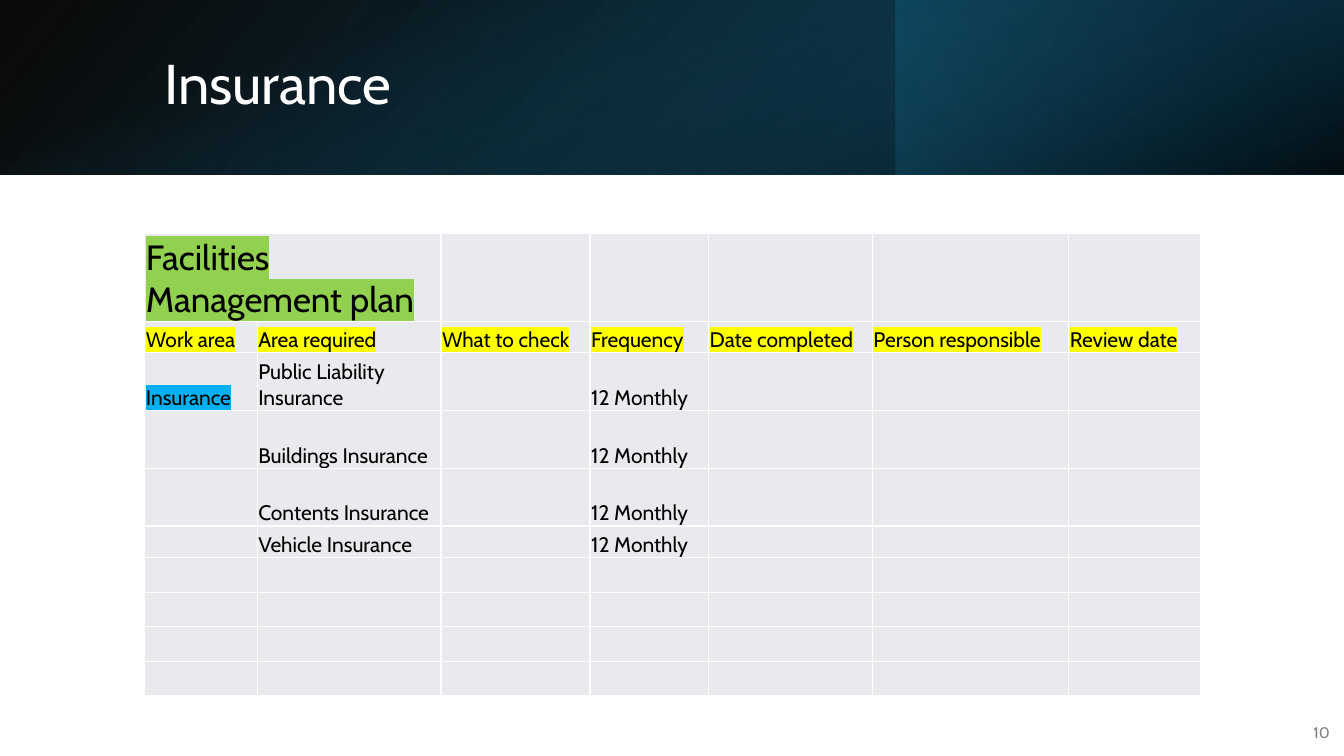
from lxml import etree
from pptx import Presentation
from pptx.dml.color import RGBColor
from pptx.enum.shapes import MSO_SHAPE
from pptx.enum.text import MSO_ANCHOR, PP_ALIGN
from pptx.oxml.ns import qn
from pptx.util import Pt

PX = 9525
FONT = "Cabin"
RECTANGLE = MSO_SHAPE.RECTANGLE
MIDDLE, BOTTOM = MSO_ANCHOR.MIDDLE, MSO_ANCHOR.BOTTOM
LEFT, RIGHT = PP_ALIGN.LEFT, PP_ALIGN.RIGHT
TITLE_ONLY = 5

COLORS = {
    "white": "FFFFFF",
    "black": "000000",
    "navy": "104862",
    "deep": "0B3041",
    "teal": "156082",
    "grey": "808080",
    "cell": "E8EAED",
    "green": "92D050",
    "yellow": "FFFF00",
    "blue": "00B0F0",
}

COLUMN_WIDTHS = [107, 175, 142, 113, 156, 187, 126]
ROW_HEIGHTS = [84, 30, 55, 55, 55, 30, 33, 33, 33, 33]
HEADINGS = ["Work area", "Area required", "What to check", "Frequency",
            "Date completed", "Person responsible", "Review date"]
POLICIES = ["Public Liability Insurance", "Buildings Insurance",
            "Contents Insurance", "Vehicle Insurance"]


def px(*lengths):
    return [length * PX for length in lengths]


def add_color(parent, color, opacity=100):
    element = etree.SubElement(parent, qn("a:srgbClr"), val=COLORS[color])
    if opacity < 100:
        etree.SubElement(element, qn("a:alpha"), val=str(opacity * 1000))


def add_run(paragraph, text, size, color, highlight=None):
    run = paragraph.add_run()
    run.text = text
    run.font.size = Pt(size)
    run.font.name = FONT
    run.font.color.rgb = RGBColor.from_string(COLORS[color])
    if highlight:
        mark = etree.Element(qn("a:highlight"))
        add_color(mark, highlight)
        run.font.fill
        run._r.rPr.find(qn("a:solidFill")).addnext(mark)


def add_gradient_band(slide, box, stops, angle, rotation=0, flipped=False):
    shape = slide.shapes.add_shape(RECTANGLE, *px(*box))
    shape.shadow.inherit = False
    shape.line.fill.background()
    shape.rotation = rotation
    properties = shape.element.spPr
    if flipped:
        properties.find(qn("a:xfrm")).set("flipH", "1")
    gradient = etree.Element(qn("a:gradFill"), rotWithShape="1")
    stop_list = etree.SubElement(gradient, qn("a:gsLst"))
    for position, color, opacity in stops:
        stop = etree.SubElement(stop_list, qn("a:gs"), pos=str(position * 1000))
        add_color(stop, color, opacity)
    etree.SubElement(gradient, qn("a:lin"), ang=str(angle * 60000), scaled="0")
    properties.find(qn("a:prstGeom")).addnext(gradient)


def set_title(slide, box, text):
    title = slide.shapes.title
    title.left, title.top, title.width, title.height = px(*box)
    title.text_frame.vertical_anchor = MIDDLE
    paragraph = title.text_frame.paragraphs[0]
    paragraph.alignment = LEFT
    paragraph.line_spacing = 0.9
    add_run(paragraph, text, 40, "white")
    slide.shapes.element.append(title.element)


def add_page_number(slide, box, text):
    frame = slide.shapes.add_textbox(*px(*box)).text_frame
    frame.word_wrap = True
    frame.vertical_anchor = MIDDLE
    paragraph = frame.paragraphs[0]
    paragraph.alignment = RIGHT
    paragraph.space_after = Pt(6)
    add_run(paragraph, text, 11, "grey")


def format_cell(cell):
    cell.fill.solid()
    cell.fill.fore_color.rgb = RGBColor.from_string(COLORS["cell"])
    cell.vertical_anchor = BOTTOM
    cell.margin_left = cell.margin_top = cell.margin_right = PX
    cell.margin_bottom = 0
    properties = cell._tc.tcPr
    for index, side in enumerate(("lnL", "lnR", "lnT", "lnB")):
        border = etree.Element(qn(f"a:{side}"), w=str(Pt(1)))
        add_color(etree.SubElement(border, qn("a:solidFill")), "white")
        properties.insert(index, border)


def write_cell(cell, text, size=15, highlight=None):
    paragraph = cell.text_frame.paragraphs[0]
    if text:
        add_run(paragraph, text, size, "black", highlight)
    else:
        etree.SubElement(paragraph._p, qn("a:endParaRPr"), sz="1000")


def add_plan_table(slide, left, top):
    size = (sum(COLUMN_WIDTHS), sum(ROW_HEIGHTS))
    table = slide.shapes.add_table(len(ROW_HEIGHTS), len(COLUMN_WIDTHS),
                                   *px(left, top, *size)).table
    table.first_row = table.horz_banding = False
    for column, width in zip(table.columns, COLUMN_WIDTHS):
        column.width = width * PX
    for row, height in zip(table.rows, ROW_HEIGHTS):
        row.height = height * PX
    contents = {(0, 0): ("Facilities Management plan", 25, "green"),
                (2, 0): ("Insurance", 15, "blue")}
    for column, heading in enumerate(HEADINGS):
        contents[1, column] = (heading, 15, "yellow")
    for row, policy in enumerate(POLICIES, 2):
        contents[row, 1] = (policy,)
        contents[row, 3] = ("12 Monthly",)
    for row in range(len(ROW_HEIGHTS)):
        for column in range(len(COLUMN_WIDTHS)):
            cell = table.cell(row, column)
            format_cell(cell)
            write_cell(cell, *contents.get((row, column), ("",)))
    table.cell(0, 0).merge(table.cell(0, 1))


def main():
    presentation = Presentation()
    presentation.slide_width, presentation.slide_height = px(1280, 720)
    slide = presentation.slides.add_slide(presentation.slide_layouts[TITLE_ONLY])
    add_gradient_band(slide, (0, 0, 1280, 166),
                      [(0, "black", 96), (100, "navy", 100)], 140, flipped=True)
    add_gradient_band(slide, (853, 0, 427, 166),
                      [(19, "deep", 68), (100, "teal", 79)], 320, rotation=180)
    add_gradient_band(slide, (557, -557, 166, 1280),
                      [(23, "teal", 0), (99, "black", 74)], 340, rotation=90)
    set_title(slide, (147, 36, 1054, 92), "Insurance")
    add_page_number(slide, (1229, 678, 47, 38), "10")
    add_plan_table(slide, 138, 222)
    presentation.save("out.pptx")


if __name__ == "__main__":
    main()
